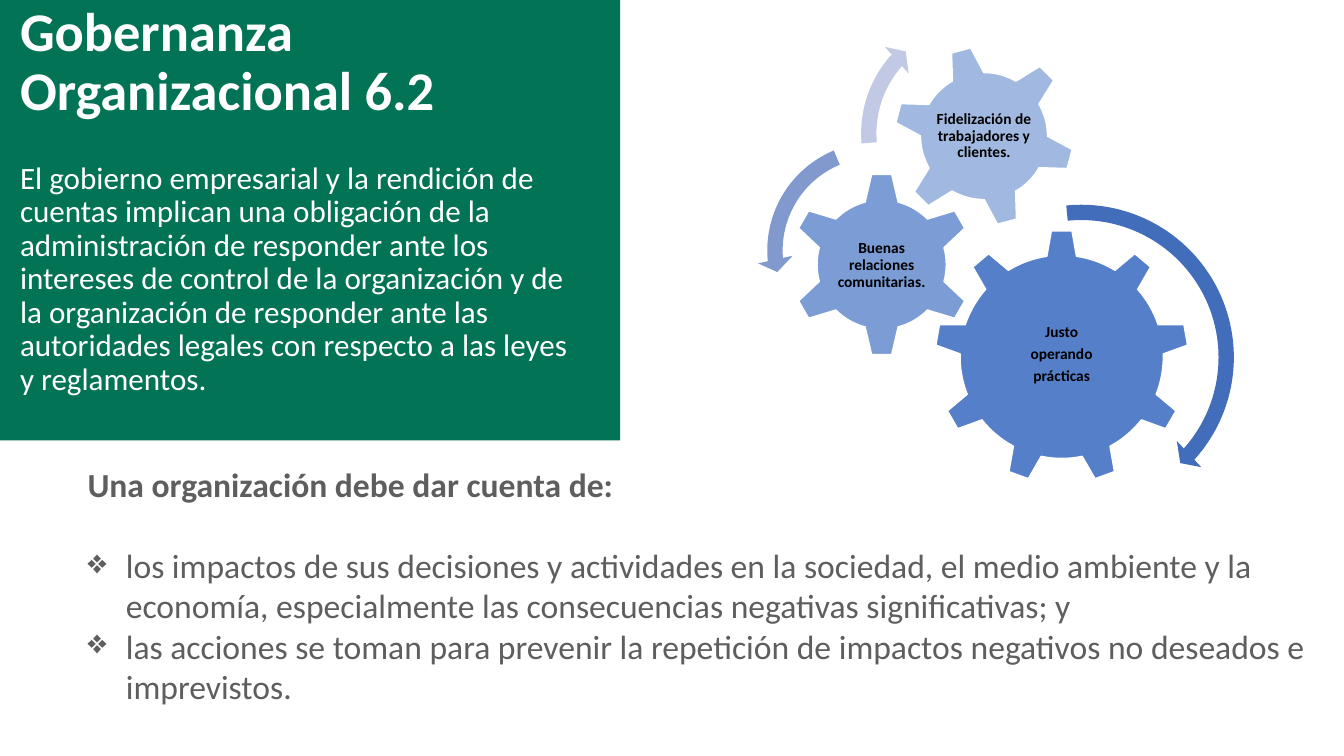
from lxml import etree
from pptx import Presentation
from pptx import util as u
from pptx.dml.color import RGBColor
from pptx.enum import shapes, text
from pptx.oxml import ns

W, H = 13.33, 7.5
GREEN, GRAY, BLUE, WHITE, BLACK = "027354", "5E5E5E", "4472C4", "FFFFFF", "000000"
MSO = shapes.MSO_SHAPE


def rgb(value):
    """Turn a hex string into a colour."""
    return RGBColor.from_string(value)


def add_figure(s, kind, box, fill, line=None, alpha=None, rotation=0):
    """Add a filled preset shape, with optional outline, opacity and rotation."""
    sp = s.shapes.add_shape(kind, *map(u.Inches, box))
    sp.shadow.inherit = False
    sp.rotation = rotation
    sp.fill.solid()
    sp.fill.fore_color.rgb = rgb(fill)
    if alpha:
        color = sp.fill._xPr.find(ns.qn("a:solidFill"))[0]
        etree.SubElement(color, ns.qn("a:alpha"), val=str(alpha * 1000))
    if line:
        sp.line.color.rgb = rgb(line)
        sp.line.width = u.Pt(1)
    else:
        sp.line.fill.background()
    return sp


def add_frame(s, box, inset=None, anchor=text.MSO_ANCHOR.TOP):
    """Add a wrapping text box and return its text frame."""
    tf = s.shapes.add_textbox(*map(u.Inches, box)).text_frame
    tf.word_wrap = True
    tf.vertical_anchor = anchor
    if inset is not None:
        tf.margin_left = tf.margin_right = u.Inches(inset)
        tf.margin_top = tf.margin_bottom = u.Inches(inset)
    return tf


def add_text(tf, words, size, color, bold=False, spacing=1.0, after=0,
             align=text.PP_ALIGN.LEFT, bullet=None, indent=0.38):
    """Write one formatted paragraph into a text frame."""
    p = tf.paragraphs[0] if not tf.paragraphs[0].runs else tf.add_paragraph()
    p.alignment, p.line_spacing = align, spacing
    p.space_before, p.space_after = u.Pt(0), u.Pt(after)
    r = p.add_run()
    r.text = words
    r.font.name, r.font.size, r.font.bold = "Calibri", u.Pt(size), bold
    r.font.color.rgb = rgb(color)
    if bullet:
        pPr = p._p.get_or_add_pPr()
        pPr.set("marL", str(u.Inches(indent)))
        pPr.set("indent", str(-u.Inches(indent)))
        etree.SubElement(pPr, ns.qn("a:buChar"), char=bullet)


def add_panel(s, x, y, w, h):
    """Draw the green panel with the title and its definition."""
    add_figure(s, MSO.RECTANGLE, (x, y, w, h), GREEN)
    tf = add_frame(s, (x + 0.1, y, w * 0.915, h * 0.94))
    add_text(tf, "Gobernanza Organizacional 6.2", 38.9, WHITE, bold=True,
             spacing=0.9, after=28.4)
    add_text(tf, "El gobierno empresarial y la rendición de cuentas implican una "
             "obligación de la administración de responder ante los intereses de "
             "control de la organización y de la organización de responder ante las "
             "autoridades legales con respecto a las leyes y reglamentos.",
             22.2, WHITE, spacing=0.9)


def add_duties(s, x, y, w, h):
    """Write the heading and the bulleted duties."""
    tf = add_frame(s, (x, y, w, h))
    add_text(tf, "Una organización debe dar cuenta de:", 24, GRAY, bold=True, after=29.3)
    for duty in (
        "los impactos de sus decisiones y actividades en la sociedad, el medio "
        "ambiente y la economía, especialmente las consecuencias negativas "
        "significativas; y",
        "las acciones se toman para prevenir la repetición de impactos negativos no "
        "deseados e imprevistos.",
    ):
        add_text(tf, duty, 24, GRAY, bullet="❖")


def add_gears(s, x, y, side):
    """Draw the gears and arrows, placed in percent of a square region."""
    def square(left, top, size):
        """Scale a square from percent of the region to inches."""
        return x + left * side / 100, y + top * side / 100, size * side / 100

    gears = [
        (MSO.GEAR_9, (35.4, 45.6, 50.4), 90, 0, (0.2, 0.23, 0.6, 0.52),
         ["Justo", "operando", "prácticas"]),
        (MSO.GEAR_6, (6.6, 34.2, 36.6), 70, 0, (0.25, 0.26, 0.5, 0.49),
         ["Buenas relaciones comunitarias."]),
        (MSO.GEAR_6, (27.2, 9, 36), 50, 345, (0.22, 0.22, 0.56, 0.56),
         ["Fidelización de trabajadores y clientes."]),
    ]
    for kind, place, alpha, rotation, label, lines in gears:
        gx, gy, size = square(*place)
        add_figure(s, kind, (gx, gy, size, size), BLUE, WHITE, alpha, rotation)
        lx, ly, lw, lh = (share * size for share in label)
        tf = add_frame(s, (gx + lx, gy + ly, lw, lh), 0.02, text.MSO_ANCHOR.MIDDLE)
        for words in lines:
            add_text(tf, words, 11, BLACK, bold=True, spacing=0.9, after=3.85,
                     align=text.PP_ALIGN.CENTER)

    arrows = [
        (MSO.CIRCULAR_ARROW, (32.2, 38.6, 64.6), "416DBB",
         (0.047, 2.99, 25.162, 158.612, 0.055)),
        (MSO.LEFT_CIRCULAR_ARROW, (0.2, 26.2, 47), "8299CE",
         (0.065, 4.3, 104.891, 148.378, 0.075)),
        (MSO.CIRCULAR_ARROW, (18.8, 1.2, 50.6), "C1C9E4",
         (0.06, 3.941, 133.138, 105.082, 0.07)),
    ]
    for kind, place, fill, bends in arrows:
        ax, ay, size = square(*place)
        sp = add_figure(s, kind, (ax, ay, size, size), fill)
        for i, bend in enumerate(bends):
            sp.adjustments[i] = bend


def main():
    """Build the slide and save it."""
    prs = Presentation()
    prs.slide_width, prs.slide_height = u.Inches(W), u.Inches(H)
    s = prs.slides.add_slide(prs.slide_layouts[6])
    add_panel(s, 0, 0, 6.15, 4.37)
    add_duties(s, 0.77, 4.55, 12.4, 1.82)
    add_gears(s, 7.5, 0, 5)
    prs.save("out.pptx")


if __name__ == "__main__":
    main()
